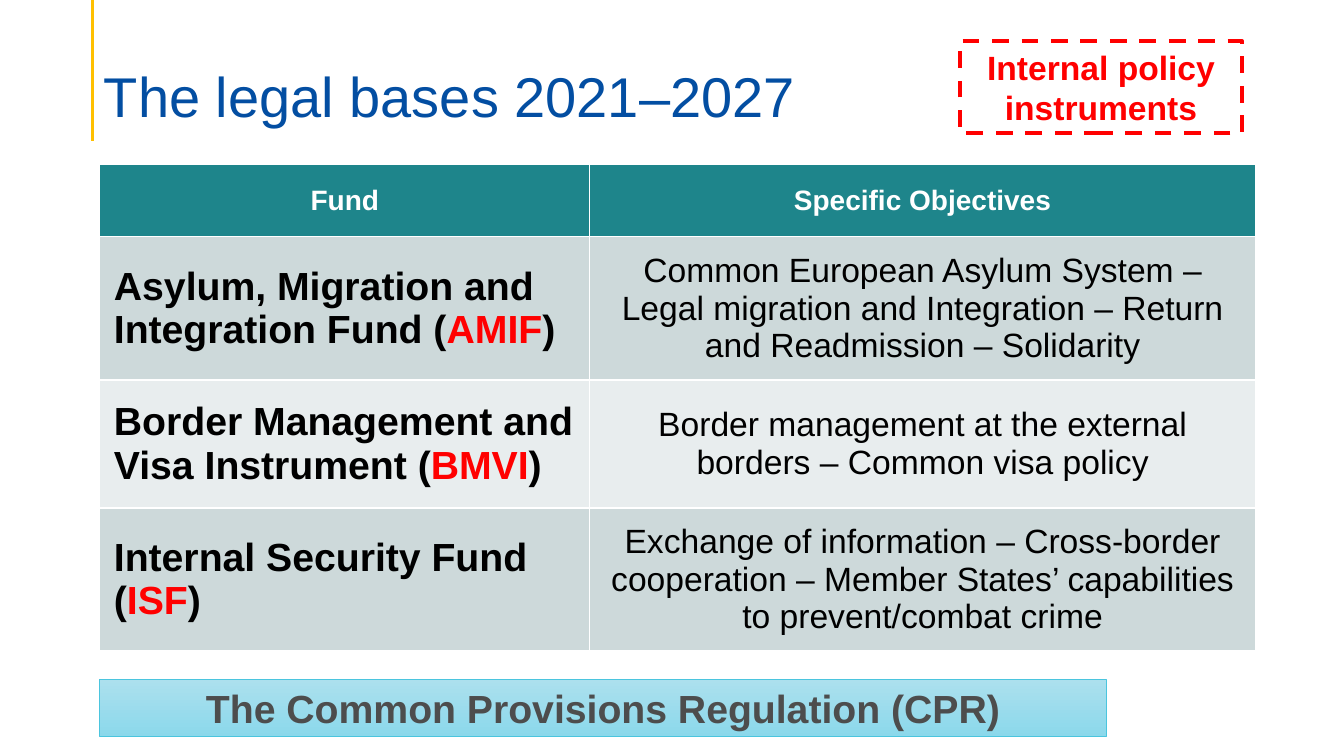
from lxml import etree
from pptx import Presentation
from pptx.dml.color import RGBColor
from pptx.enum.dml import MSO_LINE
from pptx.enum.shapes import MSO_CONNECTOR, MSO_SHAPE
from pptx.enum.text import MSO_ANCHOR, MSO_AUTO_SIZE, PP_ALIGN
from pptx.oxml.ns import qn
from pptx.util import Pt

PX = 9144
FONT = "Arial"
LEFT, MID = PP_ALIGN.LEFT, PP_ALIGN.CENTER
CENTRE, BASE = MSO_ANCHOR.MIDDLE, MSO_ANCHOR.BOTTOM
FIXED = MSO_AUTO_SIZE.NONE
DASH = MSO_LINE.DASH
RECT = MSO_SHAPE.RECTANGLE
STRAIGHT = MSO_CONNECTOR.STRAIGHT

BLACK = RGBColor(0, 0, 0)
WHITE = RGBColor(255, 255, 255)
RED = RGBColor(255, 0, 0)
BLUE = RGBColor(0x03, 0x4E, 0xA2)
GOLD = RGBColor(0xFF, 0xC0, 0x00)
TEAL = RGBColor(0x1E, 0x85, 0x8B)
DARK = RGBColor(0xCD, 0xD9, 0xDA)
LIGHT = RGBColor(0xE8, 0xED, 0xEE)
GREY = RGBColor(0x4D, 0x4D, 0x4D)
CYAN = RGBColor(0x4B, 0xC5, 0xDE)
FADE = RGBColor(0xAC, 0xE0, 0xEE), RGBColor(0x8B, 0xD8, 0xEB)

HEAD = "Fund", "Specific Objectives"
FUNDS = [
    ("Asylum, Migration and Integration Fund (*AMIF*)",
     "Common European Asylum System – Legal migration and Integration – "
     "Return and Readmission – Solidarity"),
    ("Border Management and Visa Instrument (*BMVI*)",
     "Border management at the external borders – Common visa policy"),
    ("Internal Security Fund\n(*ISF*)",
     "Exchange of information – Cross-border cooperation – "
     "Member States’ capabilities to prevent/combat crime"),
]


def write(frame, text, size=24, color=BLACK, bold=True, align=MID, space=1.0):
    """Fill a text frame, with parts between asterisks in red."""
    for num, part in enumerate(text.split("\n")):
        para = frame.add_paragraph() if num else frame.paragraphs[0]
        para.alignment = align
        para.line_spacing = space
        for turn, piece in enumerate(part.split("*")):
            if piece:
                run = para.add_run()
                run.text = piece
                font = run.font
                font.name, font.size, font.bold = FONT, Pt(size), bold
                font.color.rgb = RED if turn % 2 else color


class Page:
    """Hold the slide and draw its elements in px."""

    def __init__(self, deck):
        """Add a slide with the title-only layout."""
        self.slide = deck.slides.add_slide(deck.slide_layouts[5])
        self.shapes = self.slide.shapes

    def title(self, text, x, y, w, h):
        """Place and format the title."""
        shape = self.shapes.title
        shape.left, shape.top = x * PX, y * PX
        shape.width, shape.height = w * PX, h * PX
        frame = shape.text_frame
        frame.auto_size, frame.vertical_anchor = FIXED, BASE
        write(frame, text, size=40, color=BLUE, bold=False, align=LEFT,
              space=0.9)

    def rule(self, x, top, end, color, width):
        """Draw an upright line."""
        line = self.shapes.add_connector(
            STRAIGHT, x * PX, top * PX, x * PX, end * PX)
        line.line.color.rgb, line.line.width = color, Pt(width)
        etree.SubElement(line.element.spPr, qn("a:effectLst"))

    def box(self, text, x, y, w, h, edge, width, fade=None, dash=None, **look):
        """Draw a framed rectangle with text."""
        shape = self.shapes.add_shape(RECT, x * PX, y * PX, w * PX, h * PX)
        shape.shadow.inherit = False
        shape.line.color.rgb, shape.line.width = edge, Pt(width)
        if dash:
            shape.line.dash_style = dash
        if fade:
            shape.fill.gradient()
            shape.fill.gradient_angle = 270
            for stop, color in zip(shape.fill.gradient_stops, fade):
                stop.color.rgb = color
        else:
            shape.fill.background()
        frame = shape.text_frame
        frame.word_wrap, frame.vertical_anchor = True, CENTRE
        write(frame, text, **look)

    def cell(self, cell, text, fill, **look):
        """Fill one table cell and rim it in white."""
        cell.fill.solid()
        cell.fill.fore_color.rgb = fill
        cell.vertical_anchor = CENTRE
        cell.margin_left = cell.margin_right = 14 * PX
        cell.margin_top = cell.margin_bottom = 14 * PX
        props = cell._tc.get_or_add_tcPr()
        for num, side in enumerate(("lnL", "lnR", "lnT", "lnB")):
            rim = etree.Element(qn("a:" + side), w=str(Pt(1)))
            solid = etree.SubElement(rim, qn("a:solidFill"))
            etree.SubElement(solid, qn("a:srgbClr"), val=str(WHITE))
            props.insert(num, rim)
        write(cell.text_frame, text, **look)

    def table(self, x, y, cols, rows):
        """Draw the table of funds."""
        grid = self.shapes.add_table(
            len(rows), len(cols), x * PX, y * PX,
            sum(cols) * PX, sum(rows) * PX).table
        for col, w in zip(grid.columns, cols):
            col.width = w * PX
        for row, h in zip(grid.rows, rows):
            row.height = h * PX
        for num, text in enumerate(HEAD):
            self.cell(grid.cell(0, num), text, TEAL, size=20, color=WHITE)
        for num, (fund, goals) in enumerate(FUNDS, 1):
            fill = DARK if num % 2 else LIGHT
            self.cell(grid.cell(num, 0), fund, fill, size=28, align=LEFT)
            self.cell(grid.cell(num, 1), goals, fill, bold=False)


def main():
    """Build and save the slide."""
    deck = Presentation()
    deck.slide_width, deck.slide_height = 1333 * PX, 750 * PX
    page = Page(deck)
    page.rule(92, 0, 140, GOLD, 2.25)
    page.title("The legal bases 2021–2027", 93, 41, 1151, 93)
    page.table(99, 163, (486, 660), (72, 142, 127, 142))
    page.box("Internal policy instruments", 952, 41, 280, 91, RED, 3,
             dash=DASH, color=RED)
    page.box("The Common Provisions Regulation (CPR)", 99, 674, 998, 57,
             CYAN, 0.5, fade=FADE, size=28, color=GREY)
    deck.save("out.pptx")


if __name__ == "__main__":
    main()
